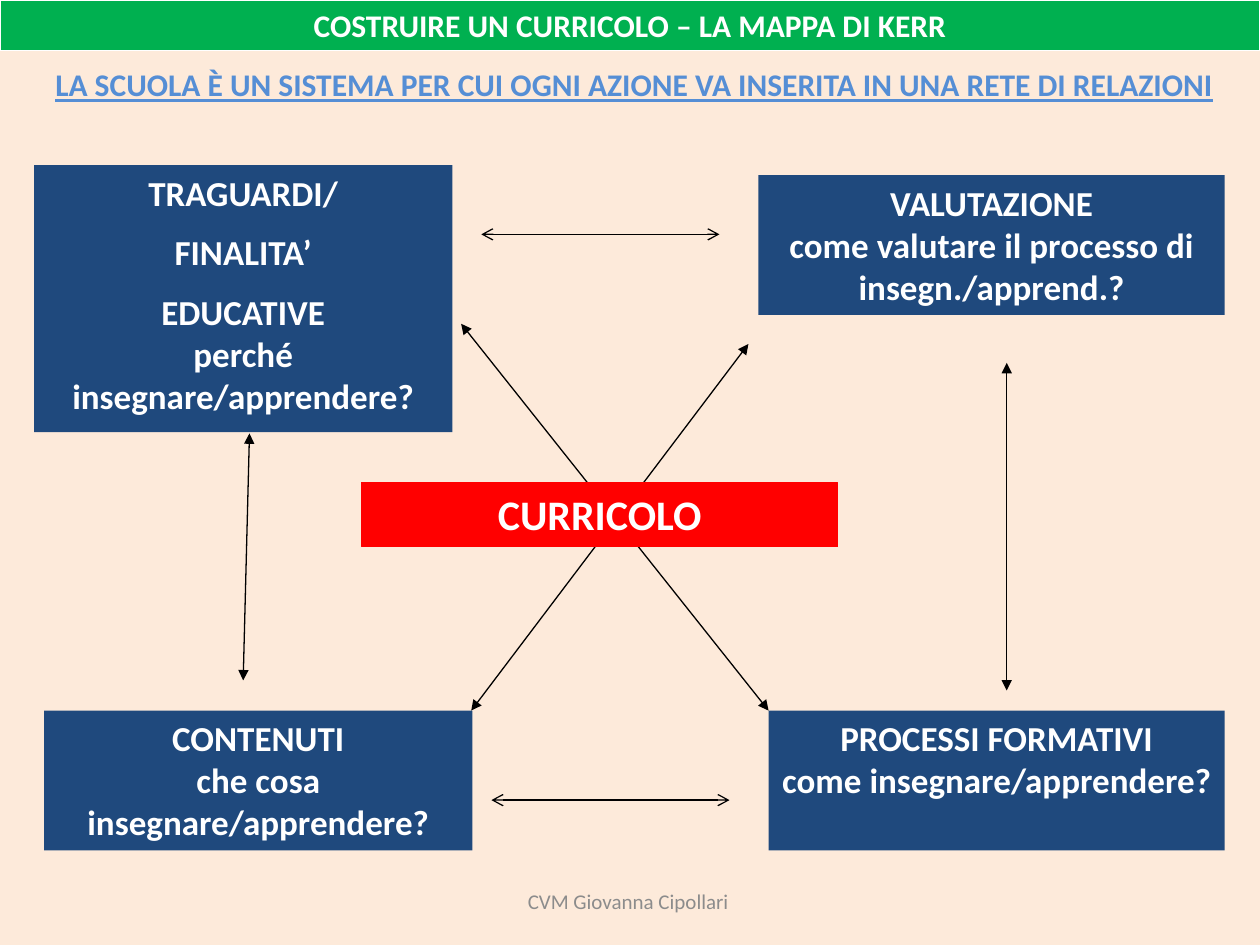
from lxml.etree import SubElement
from pptx import Presentation
from pptx.dml.color import RGBColor
from pptx.enum.shapes import MSO_CONNECTOR, MSO_SHAPE
from pptx.enum.text import MSO_ANCHOR, MSO_AUTO_SIZE, PP_ALIGN
from pptx.oxml.ns import qn
from pptx.util import Pt

PEACH = RGBColor(0xFD, 0xEA, 0xDA)
NAVY = RGBColor(0x1F, 0x49, 0x7D)
RED = RGBColor(0xFF, 0x00, 0x00)
GREEN = RGBColor(0x00, 0xB0, 0x50)
BLUE = RGBColor(0x55, 0x8E, 0xD5)
GRAY = RGBColor(0x8C, 0x8C, 0x8C)
WHITE = RGBColor(0xFF, 0xFF, 0xFF)
BLACK = RGBColor(0x00, 0x00, 0x00)

HEADING = {"size": Pt(18), "bold": True}
TOPIC = {"size": Pt(20), "bold": True}
CENTER = {"size": Pt(24), "bold": True}
SUBTITLE = {"size": Pt(18), "bold": True, "underline": True}
FOOTER = {"size": Pt(12), "bold": False}
GAP = 10  # space before a spaced paragraph

# Box and line positions: left, top, width, height / x1, y1, x2, y2
TOPICS = [
    ((439.2, 406.08, 260.64, 79.92),
     [("PROCESSI FORMATIVI", 0), ("come insegnare/apprendere?", 0)]),
    ((433.44, 100.08, 266.4, 79.92),
     [("VALUTAZIONE", 0),
      ("come valutare il processo di insegn./apprend.?", 0)]),
    ((19.44, 94.32, 239.04, 152.64),
     [("TRAGUARDI/", 0), ("FINALITA’", GAP), ("EDUCATIVE", GAP),
      ("perché insegnare/apprendere?", 0)]),
    ((25.2, 406.08, 244.8, 79.92),
     [("CONTENUTI", 0), ("che cosa insegnare/apprendere?", 0)]),
]
DIAGONALS = [(439.2, 406.08, 263.52, 185.04), (269.28, 406.08, 427.68, 196.56)]
VERTICALS = [(575.28, 207.36, 575.28, 394.56), (142.56, 247.68, 138.96, 388.8)]
HORIZONTALS = [(275.04, 133.92, 411.12, 133.92), (280.8, 457.2, 416.88, 457.2)]


def write_text(shape, paragraphs, font_format, color, anchor=MSO_ANCHOR.TOP,
               auto_size=MSO_AUTO_SIZE.SHAPE_TO_FIT_TEXT):
    frame = shape.text_frame
    frame_format = {"word_wrap": True, "vertical_anchor": anchor,
                    "auto_size": auto_size}
    for name, value in frame_format.items():
        setattr(frame, name, value)
    for index, (text, space) in enumerate(paragraphs):
        paragraph = frame.add_paragraph() if index else frame.paragraphs[0]
        paragraph.alignment = PP_ALIGN.CENTER
        paragraph.space_before = Pt(space)
        run = paragraph.add_run()
        run.text = text
        for name, value in {"name": "Calibri", **font_format}.items():
            setattr(run.font, name, value)
        run.font.color.rgb = color


def add_box(slide, place, paragraphs, font_format, fill, border=None):
    shape = slide.shapes.add_shape(MSO_SHAPE.RECTANGLE, *map(Pt, place))
    shape.shadow.inherit = False
    shape.fill.solid()
    shape.fill.fore_color.rgb = fill
    if border is None:
        shape.line.fill.background()
    else:
        shape.line.color.rgb = border
        shape.line.width = Pt(0.75)
    write_text(shape, paragraphs, font_format, WHITE)


def add_label(slide, place, text, font_format, color, **frame_options):
    label = slide.shapes.add_textbox(*map(Pt, place))
    write_text(label, [(text, 0)], font_format, color, **frame_options)


def add_double_arrow(slide, ends, head):
    connector = slide.shapes.add_connector(
        MSO_CONNECTOR.STRAIGHT, *map(Pt, ends))
    connector.line.color.rgb = BLACK
    connector.line.width = Pt(0.75)
    properties = connector._element.spPr
    line = properties.find(qn("a:ln"))
    for tag in ("a:headEnd", "a:tailEnd"):
        SubElement(line, qn(tag), type=head)
    SubElement(properties, qn("a:effectLst"))


def main():
    presentation = Presentation()
    presentation.slide_width, presentation.slide_height = Pt(720), Pt(540)
    slide = presentation.slides.add_slide(presentation.slide_layouts[6])
    slide.background.fill.solid()
    slide.background.fill.fore_color.rgb = PEACH

    # Diagonals run behind the central box
    for ends in DIAGONALS:
        add_double_arrow(slide, ends, "triangle")
    add_box(slide, (206.64, 275.76, 272.16, 36.72), [("CURRICOLO", 0)],
            CENTER, RED, RED)

    # Four corners of the map
    for place, paragraphs in TOPICS:
        add_box(slide, place, paragraphs, TOPIC, NAVY)

    # Arrows between neighbouring corners
    for ends in VERTICALS:
        add_double_arrow(slide, ends, "triangle")
    for ends in HORIZONTALS:
        add_double_arrow(slide, ends, "arrow")

    # Title, footer and subtitle
    add_box(slide, (0, 0, 720, 28.8),
            [("COSTRUIRE UN CURRICOLO – LA MAPPA DI KERR", 0)],
            HEADING, GREEN, WHITE)
    add_label(slide, (246.24, 500.4, 228.24, 28.8), "CVM Giovanna Cipollari ",
              FOOTER, GRAY, anchor=MSO_ANCHOR.MIDDLE,
              auto_size=MSO_AUTO_SIZE.NONE)
    add_label(slide, (16.56, 33.84, 691.92, 28.8),
              "LA SCUOLA È UN SISTEMA PER CUI OGNI AZIONE VA INSERITA "
              "IN UNA RETE DI RELAZIONI", SUBTITLE, BLUE)

    presentation.save("out.pptx")


if __name__ == "__main__":
    main()
